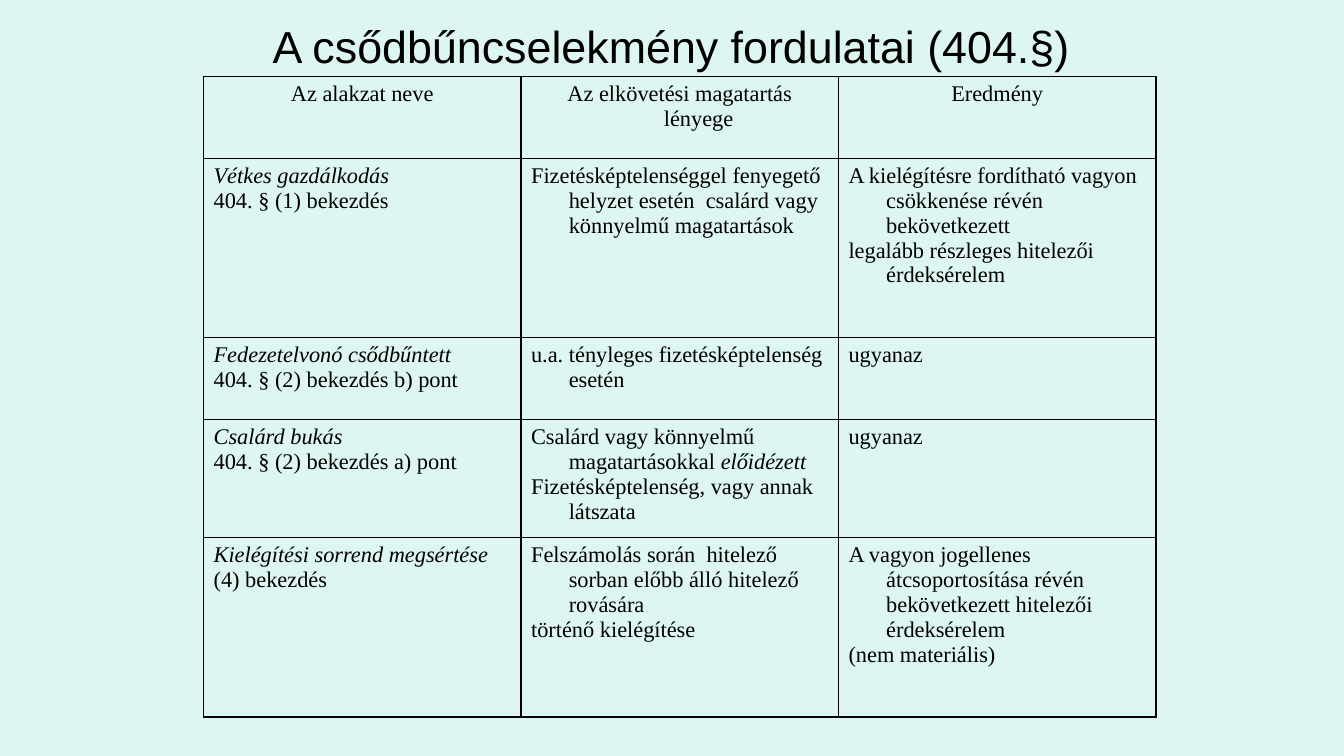
import pptx
import pptx.util
import pptx.dml.color
import pptx.enum.text
import pptx.oxml
import pptx.oxml.ns
from lxml import etree

Cm = pptx.util.Cm
Pt = pptx.util.Pt
ALIGN = pptx.enum.text.PP_ALIGN
HUES = {"back": "DEF6F1", "ink": "000000"}
WIDTH = 8
HEIGHTS = [2.06, 4.52, 2.06, 2.98, 4.52]
HANG = 0.95
ROWS = [
    [["Az alakzat neve"], ["Az elkövetési magatartás lényege"], ["Eredmény"]],
    [
        ["*Vétkes gazdálkodás*", "404. § (1) bekezdés"],
        ["Fizetésképtelenséggel fenyegető helyzet esetén  csalárd vagy könnyelmű magatartások"],
        ["A kielégítésre fordítható vagyon csökkenése révén bekövetkezett",
         "legalább részleges hitelezői érdeksérelem"],
    ],
    [
        ["*Fedezetelvonó csődbűntett*", "404. § (2) bekezdés b) pont"],
        ["u.a. tényleges fizetésképtelenség esetén"],
        ["ugyanaz"],
    ],
    [
        ["*Csalárd bukás*", "404. § (2) bekezdés a) pont"],
        ["Csalárd vagy könnyelmű magatartásokkal *előidézett*",
         "Fizetésképtelenség, vagy annak látszata"],
        ["ugyanaz"],
    ],
    [
        ["*Kielégítési sorrend megsértése*", "(4) bekezdés"],
        ["Felszámolás során  hitelező sorban előbb álló hitelező rovására",
         "történő kielégítése"],
        ["A vagyon jogellenes átcsoportosítása révén bekövetkezett hitelezői érdeksérelem",
         "(nem materiális)"],
    ],
]


def color(name):
    return pptx.dml.color.RGBColor.from_string(HUES[name])


def style(para, face, size, align):
    para.alignment = align
    para.font.name = face
    para.font.size = Pt(size)
    para.font.color.rgb = color("ink")


def write(para, text, align):
    style(para, "Times New Roman", 16, align)
    props = para._p.get_or_add_pPr()
    props.set("marL", str(Cm(HANG)))
    props.set("indent", str(-Cm(HANG)))
    parts = [(part, i % 2 == 1) for i, part in enumerate(text.split("*")) if part]
    for part, slant in parts:
        run = para.add_run()
        run.text = part
        if len(parts) > 1:
            run.font.italic = slant
    if len(parts) == 1:
        para.font.italic = parts[0][1]


def border(cell):
    props = cell._tc.get_or_add_tcPr()
    for side in ("lnL", "lnR", "lnT", "lnB"):
        line = etree.SubElement(props, pptx.oxml.ns.qn(f"a:{side}"), w=str(Pt(1)))
        fill = etree.SubElement(line, pptx.oxml.ns.qn("a:solidFill"))
        etree.SubElement(fill, pptx.oxml.ns.qn("a:srgbClr"), val=HUES["ink"])


def fill_cell(cell, lines, align):
    border(cell)
    cell.fill.background()
    frame = cell.text_frame
    for i, text in enumerate(lines):
        para = frame.add_paragraph() if i else frame.paragraphs[0]
        write(para, text, align)


def add_grid(slide):
    count = len(ROWS[0])
    shape = slide.shapes.add_table(
        len(ROWS), count, Cm(5.13), Cm(1.93), Cm(WIDTH * count), Cm(sum(HEIGHTS)))
    table = shape.table
    table.first_row = False
    table.horz_banding = False
    for col in table.columns:
        col.width = Cm(WIDTH)
    for r, (height, row) in enumerate(zip(HEIGHTS, ROWS)):
        table.rows[r].height = Cm(height)
        for c, lines in enumerate(row):
            fill_cell(table.cell(r, c), lines, ALIGN.LEFT if r else ALIGN.CENTER)


def add_title(slide, text):
    box = slide.shapes.add_textbox(Cm(5.51), Cm(0.76), Cm(22.83), Cm(0.76))
    frame = box.text_frame
    frame.word_wrap = True
    frame.auto_size = pptx.enum.text.MSO_AUTO_SIZE.NONE
    frame.vertical_anchor = pptx.enum.text.MSO_ANCHOR.MIDDLE
    frame.text = text
    style(frame.paragraphs[0], "Arial", 32, ALIGN.CENTER)


def main():
    deck = pptx.Presentation()
    deck.slide_width = Cm(33.87)
    deck.slide_height = Cm(19.05)
    slide = deck.slides.add_slide(deck.slide_layouts[6])
    back = slide.background.fill
    back.solid()
    back.fore_color.rgb = color("back")
    add_grid(slide)
    add_title(slide, "A csődbűncselekmény fordulatai (404.§)")
    deck.save("out.pptx")


if __name__ == "__main__":
    main()
